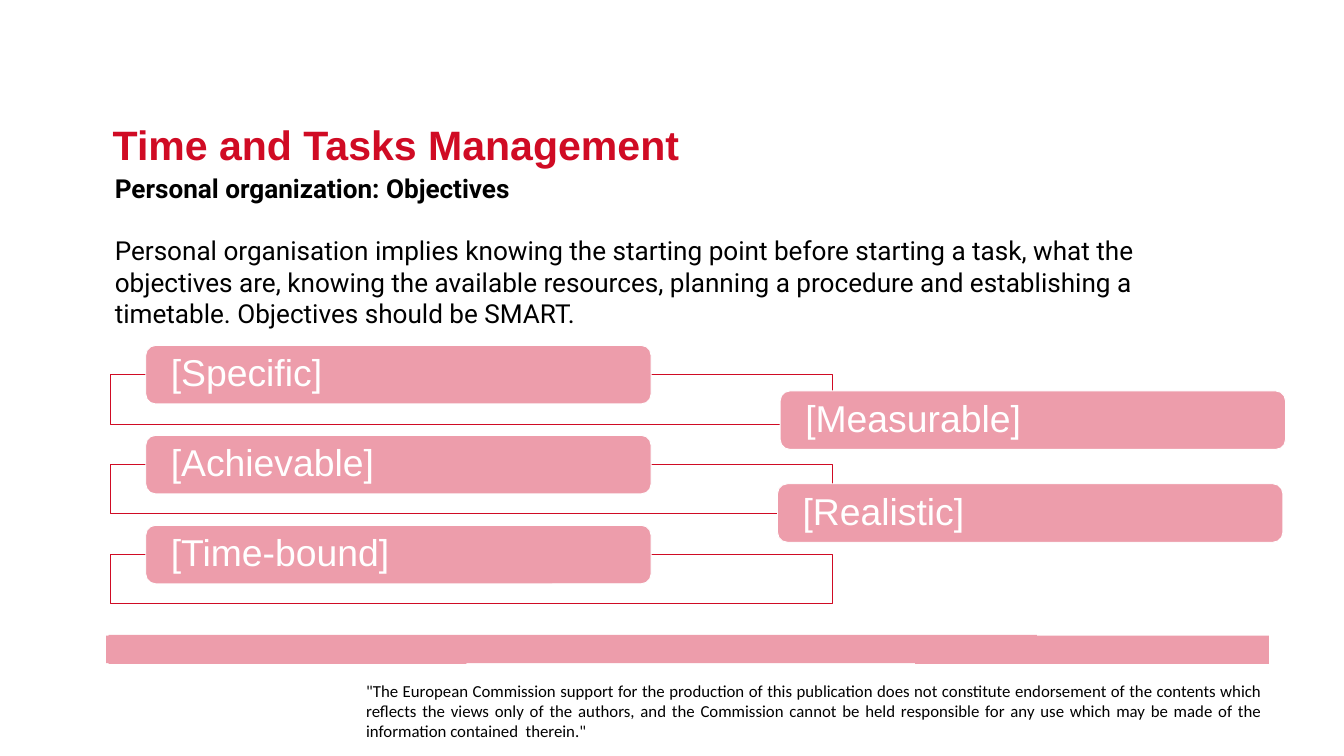
"""Build the slide on SMART objectives in personal organisation."""
from lxml import etree
from pptx import Presentation
from pptx import util as u
from pptx.dml import color
from pptx.enum import shapes, text
from pptx.oxml import ns

RED = color.RGBColor(0xD0, 0x0B, 0x24)
PINK = color.RGBColor(0xED, 0x9D, 0xAB)
WHITE = color.RGBColor(0xFF, 0xFF, 0xFF)
BLACK = color.RGBColor(0x00, 0x00, 0x00)

TEXT_INSETS = (0.25, 0.13, 0.25, 0.13)
LABEL_INSETS = (0.84, 0.1, 0.71, 0.1)
NO_INSETS = (0, 0, 0, 0)

BAND_OUTLINE = [
    (47.96, 24.03), (39.19, 24.03), (39.19, 24), (4.11, 24), (4.11, 24.03),
    (4.01, 24.03), (4.01, 25.07), (4.11, 25.07), (4.11, 25.1), (17.63, 25.1),
    (17.63, 25.07), (34.59, 25.07), (34.59, 25.1), (47.96, 25.1),
]
INTRODUCTION = (
    "Personal organisation implies knowing the starting point before starting a task, "
    "what the objectives are, knowing the available resources, planning a procedure and "
    "establishing a timetable. Objectives should be SMART."
)
DISCLAIMER = (
    "\"The European Commission support for the production of this publication does not "
    "constitute endorsement of the contents which reflects the views only of the authors, "
    "and the Commission cannot be held responsible for any use which may be made of the "
    "information contained  therein.\""
)


def write(para, words, *, font, size, ink=BLACK, bold=False,
          align=text.PP_ALIGN.LEFT, spacing=None, before=None):
    """Add formatted words to a paragraph."""
    para.alignment = align
    if spacing is not None:
        para.line_spacing = spacing
    if before is not None:
        para.space_before = u.Pt(before)
    span = para.add_run()
    span.text = words
    span.font.name = font
    span.font.size = u.Pt(size)
    span.font.bold = bold
    span.font.color.rgb = ink


class Painter:
    """Hold the style and the current slide."""

    def __init__(self, page):
        """Start painting on a page."""
        self.page = page
        self.label_size = (19.1, 2.21)
        self.frame_size = (27.31, 1.88)
        self.line_width = u.Pt(1)

    def set_insets(self, frame, insets):
        """Wrap a text frame and set its margins."""
        frame.word_wrap = True
        (frame.margin_left, frame.margin_top,
         frame.margin_right, frame.margin_bottom) = map(u.Cm, insets)

    def textbox(self, left, top, width, height, insets=TEXT_INSETS):
        """Add an empty text box and return its text frame."""
        box = self.page.shapes.add_textbox(*map(u.Cm, (left, top, width, height)))
        self.set_insets(box.text_frame, insets)
        return box.text_frame

    def block(self, kind, left, top, size, fill, line):
        """Add a filled and outlined preset shape."""
        shape = self.page.shapes.add_shape(kind, *map(u.Cm, (left, top, *size)))
        shape.shadow.inherit = False
        shape.fill.solid()
        shape.fill.fore_color.rgb = fill
        shape.line.color.rgb = line
        shape.line.width = self.line_width
        return shape

    def frame(self, left, top):
        """Add a translucent white rectangle with a red outline."""
        shape = self.block(shapes.MSO_SHAPE.RECTANGLE, left, top, self.frame_size, WHITE, RED)
        tint = shape.fill._xPr.find(ns.qn("a:solidFill"))[0]
        etree.SubElement(tint, ns.qn("a:alpha"), val="90000")

    def label(self, left, top, words):
        """Add a rounded pink label."""
        shape = self.block(shapes.MSO_SHAPE.ROUNDED_RECTANGLE, left, top,
                           self.label_size, PINK, WHITE)
        shape.adjustments[0] = 0.167
        self.set_insets(shape.text_frame, LABEL_INSETS)
        shape.text_frame.vertical_anchor = text.MSO_ANCHOR.MIDDLE
        write(shape.text_frame.paragraphs[0], words, font="Arial", size=40,
              ink=WHITE, spacing=0.9)

    def band(self, outline):
        """Add a closed pink outline without a line."""
        start, *corners = [(u.Cm(x), u.Cm(y)) for x, y in outline]
        builder = self.page.shapes.build_freeform(*start)
        builder.add_line_segments(corners, close=True)
        shape = builder.convert_to_shape()
        shape.shadow.inherit = False
        shape.fill.solid()
        shape.fill.fore_color.rgb = PINK
        shape.line.fill.background()


def main():
    """Build and save the deck."""
    deck = Presentation()
    deck.slide_width, deck.slide_height = u.Cm(50.8), u.Cm(28.58)
    painter = Painter(deck.slides.add_slide(deck.slide_layouts[6]))

    painter.band(BAND_OUTLINE)
    footer = painter.textbox(13.84, 25.78, 33.86, 1.93, NO_INSETS)
    write(footer.paragraphs[0], DISCLAIMER, font="Calibri", size=18,
          align=text.PP_ALIGN.JUSTIFY, spacing=0.98)

    body = painter.textbox(4.09, 6.38, 42.77, 6.17)
    write(body.paragraphs[0], "Personal organization: Objectives",
          font="Roboto", size=28, bold=True)
    write(body.add_paragraph(), INTRODUCTION, font="Roboto", size=28, before=33.5)

    title = painter.textbox(4.01, 4.37, 24.49, 2.11)
    write(title.paragraphs[0], "Time and Tasks Management",
          font="Arial", size=44, ink=RED, bold=True)

    for row, words in enumerate(("[Specific]", "[Achievable]", "[Time-bound]")):
        drop = row * 3.4
        painter.frame(4.17, 14.15 + drop)
        painter.label(5.51, 13.06 + drop, words)
    painter.label(29.49, 14.78, "[Measurable]")
    painter.label(29.39, 18.29, "[Realistic]")

    deck.save("out.pptx")


if __name__ == "__main__":
    main()
